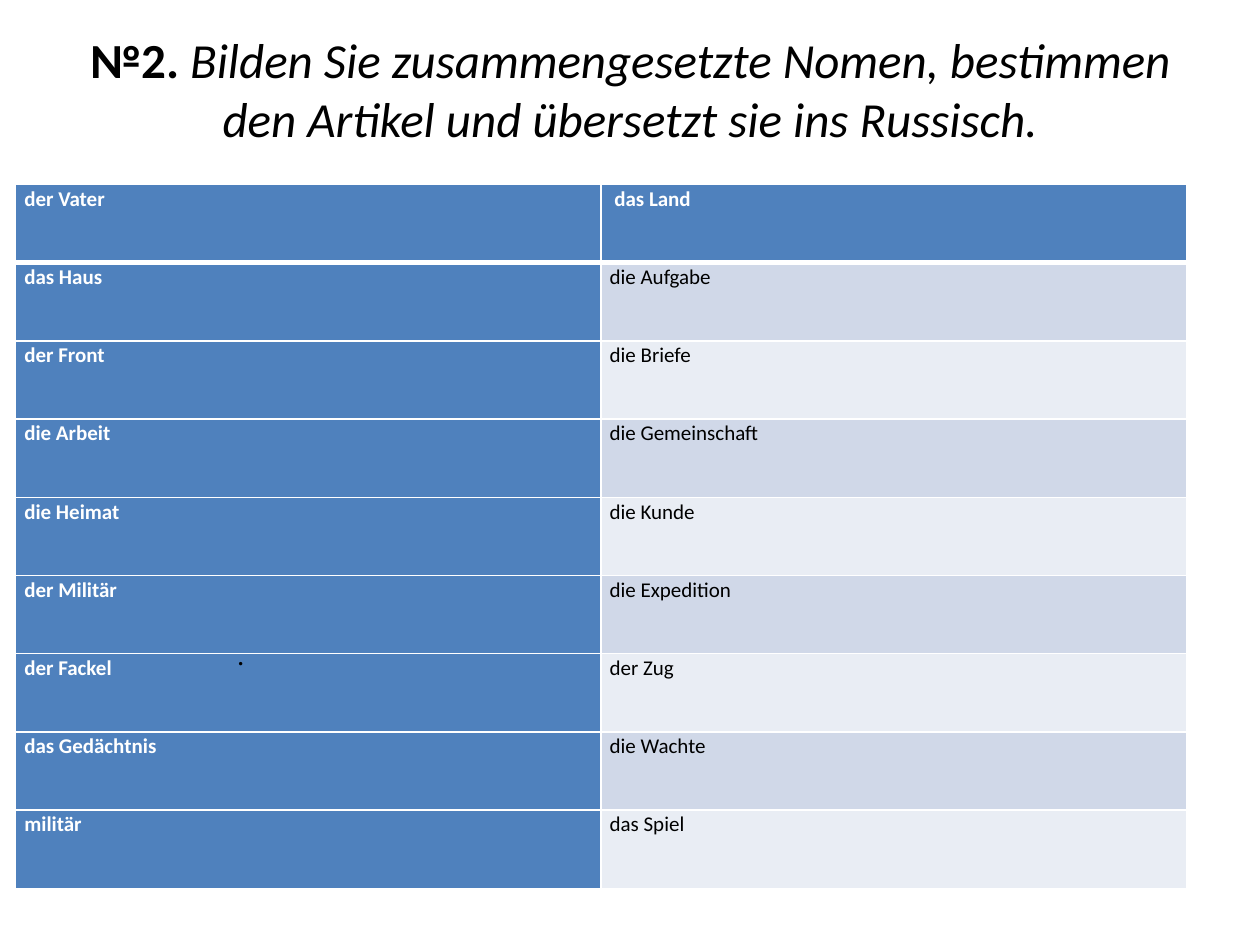
from lxml import etree
from pptx import Presentation
from pptx.dml.color import RGBColor
from pptx.enum.text import MSO_ANCHOR, PP_ALIGN
from pptx.oxml.ns import qn
from pptx.util import Pt

MIDDLE, CENTER = MSO_ANCHOR.MIDDLE, PP_ALIGN.CENTER
WHITE = RGBColor(0xFF, 0xFF, 0xFF)
BLACK = RGBColor(0x00, 0x00, 0x00)
BLUE = RGBColor(0x4F, 0x81, 0xBD)
BANDS = (RGBColor(0xE9, 0xED, 0xF4), RGBColor(0xD0, 0xD8, 0xE8))

# Content
NUMBER = "№2. "
TASK = ("Bilden Sie zusammengesetzte Nomen, bestimmen den Artikel "
        "und übersetzt sie ins Russisch.")
NOUNS = [
    ("der Vater", " das Land"),
    ("das Haus", "die Aufgabe"),
    ("der Front", "die Briefe"),
    ("die Arbeit", "die Gemeinschaft"),
    ("die Heimat", "die Kunde"),
    ("der Militär", "die Expedition"),
    ("der Fackel", "der Zug"),
    ("das Gedächtnis", "die Wachte"),
    ("militär", "das Spiel"),
]
LEFT, TOP, COL_W, ROW_H = 8.9, 105.5, 334.5, 44.7


def style(r, size, color, bold=False, italic=False, name="Calibri"):
    r.font.name, r.font.size = name, Pt(size)
    r.font.bold, r.font.italic = bold, italic
    r.font.color.rgb = color


def set_borders(cell, widths):
    """Give a cell white borders; widths are left, right, top, bottom."""
    tcPr = cell._tc.get_or_add_tcPr()
    for i, (side, width) in enumerate(zip(("lnL", "lnR", "lnT", "lnB"), widths)):
        ln = etree.Element(qn("a:" + side), w=str(Pt(width)))
        fill = etree.SubElement(ln, qn("a:solidFill"))
        etree.SubElement(fill, qn("a:srgbClr"), val=str(WHITE))
        tcPr.insert(i, ln)


prs = Presentation()
prs.slide_width, prs.slide_height = Pt(720), Pt(540)
slide = prs.slides.add_slide(prs.slide_layouts[5])

# Title
title = slide.shapes.title
title.left, title.top, title.width, title.height = Pt(36), Pt(21.6), Pt(648), Pt(90)
tf = title.text_frame
tf.vertical_anchor = MIDDLE
tf.margin_bottom = Pt(36)
p = tf.paragraphs[0]
p.alignment = CENTER
for text, bold in ((NUMBER, True), (TASK, False)):
    r = p.add_run()
    r.text = text
    style(r, 28, BLACK, bold=bold, italic=not bold)

# Table of nouns
table = slide.shapes.add_table(
    len(NOUNS), 2, Pt(LEFT), Pt(TOP), Pt(2 * COL_W), Pt(len(NOUNS) * ROW_H)).table
table.first_col = True
for col in table.columns:
    col.width = Pt(COL_W)
for i, nouns in enumerate(NOUNS):
    table.rows[i].height = Pt(ROW_H)
    for j, noun in enumerate(nouns):
        cell = table.cell(i, j)
        strong = i == 0 or j == 0
        cell.margin_left = cell.margin_right = Pt(5)
        cell.margin_top = cell.margin_bottom = Pt(0)
        cell.fill.solid()
        cell.fill.fore_color.rgb = BLUE if strong else BANDS[i % 2]
        set_borders(cell, (1, 1, 3 if i == 1 else 1, 3 if i == 0 else 1))
        p = cell.text_frame.paragraphs[0]
        p.text = noun
        p.line_spacing = 1.07
        style(p.runs[0], 12, WHITE if strong else BLACK, bold=strong)

# Single dot over the table
dot = slide.shapes.add_textbox(Pt(129), Pt(365), Pt(93.6), Pt(21.6))
tf = dot.text_frame
tf.word_wrap = True
tf.vertical_anchor = MIDDLE
tf.text = "."
style(tf.paragraphs[0].runs[0], 12, BLACK, bold=True, name="Times New Roman")

prs.save("out.pptx")
